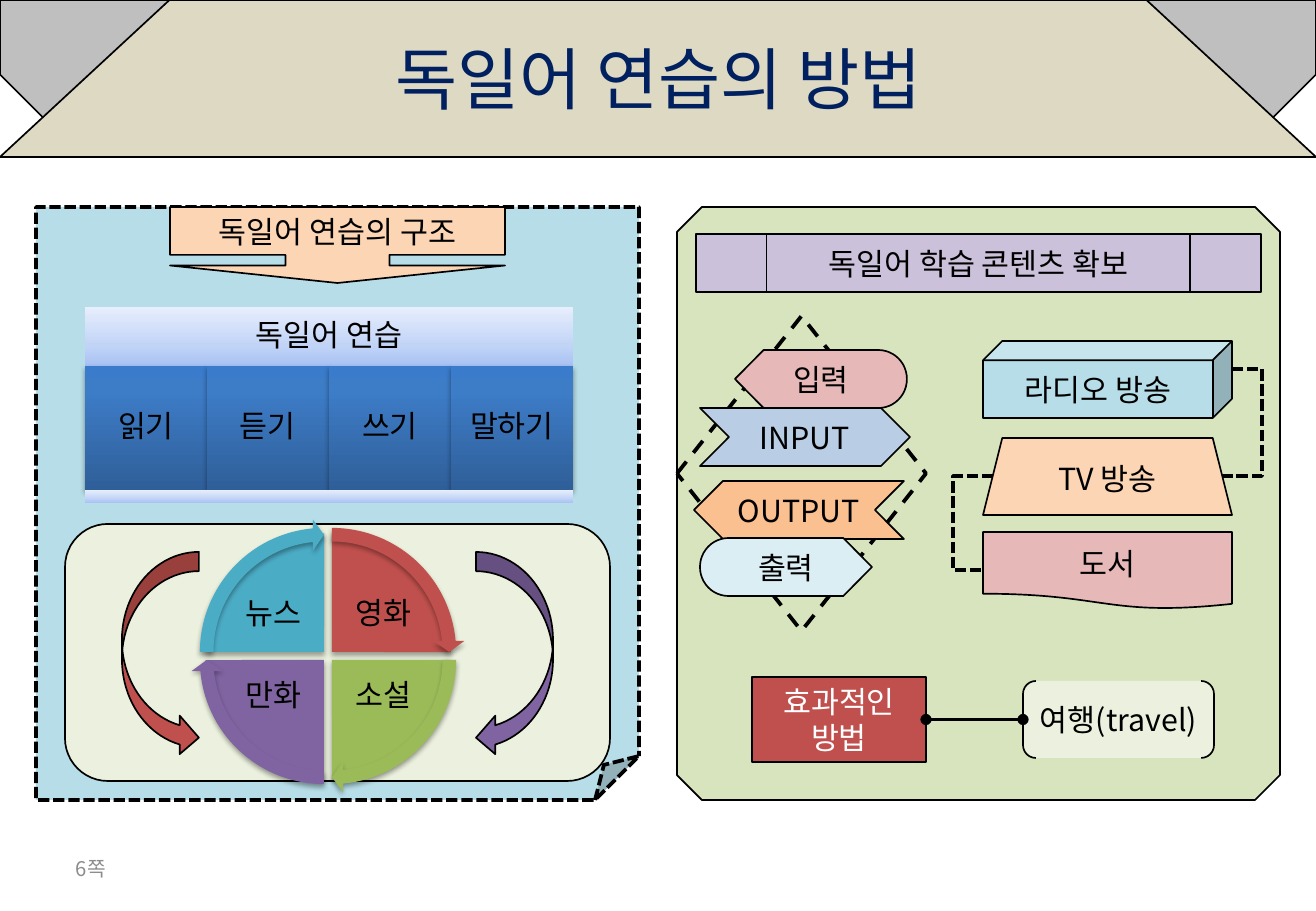
from copy import deepcopy

from lxml import etree
from pptx import Presentation
from pptx import util as u
from pptx.dml.color import RGBColor
from pptx.enum import dml, shapes, text
from pptx.oxml.ns import qn

PX = 914400 / 121.5
FONT = "Noto Sans CJK KR"
KIND = shapes.MSO_SHAPE
COLOURS = {
    "black": "000000", "white": "FFFFFF", "navy": "002060", "grey": "8C8C8C",
    "silver": "BFBFBF", "sand": "DDD9C3", "sky": "B7DEE8", "cream": "EBF1DE",
    "peach": "FCD5B5", "sage": "D7E4BD", "lilac": "CCC1DA", "pink": "E6B9B8",
    "periwinkle": "B9CDE5", "apricot": "FAC090", "ice": "DBEEF4", "red": "C0504D",
    "green": "9BBB59", "purple": "8064A2", "teal": "4BACC6",
    "pale 1": "A8C2F4", "pale 2": "C2D4F6", "pale 3": "E7EEFD",
    "blue 1": "2F5F99", "blue 2": "3D7CC7", "blue 3": "3A7CCB",
}
PALE = [(0, "pale 1"), (0.35, "pale 2"), (1, "pale 3")]
BLUE = [(0, "blue 1"), (0.8, "blue 2"), (1, "blue 3")]
THIN = {"width": 1}
DASHED = {"width": 2.25, "dash": dml.MSO_LINE.SQUARE_DOT}
WIDE_DASH = {"width": 2.25, "dash": dml.MSO_LINE.DASH}

# Content: kind, (left, top, width, height), fill, words, options
HEADER = [
    (KIND.SNIP_2_SAME_RECTANGLE, (0, 0, 1316, 149), "silver", "",
     {"flip": "V", "adjust": [0.5, 0]}),
    (KIND.TRAPEZOID, (0, 0, 1316, 157), "sand", "", {"adjust": [1.08]}),
    (None, (66, 2, 1185, 152), None, "독일어 연습의 방법", {"size": 40, "colour": "navy"}),
    (None, (64, 844, 307, 49), None, "6쪽",
     {"size": 12, "colour": "grey", "align": text.PP_ALIGN.LEFT}),
]
LEFT_PANEL = [
    (KIND.FOLDED_CORNER, (36, 207, 603, 593), "sky", "", {"adjust": [0.074], "line": DASHED}),
    (KIND.ROUNDED_RECTANGLE, (65, 524, 545, 257), "cream", "", {}),
    (KIND.DOWN_ARROW_CALLOUT, (170, 207, 335, 76), "peach", "독일어 연습의 구조",
     {"adjust": [1.368, 2.917, 0.23, 0.63]}),
    (KIND.CURVED_DOWN_ARROW, (412, 616, 205, 77), "purple", "", {"turn": 90}),
    (KIND.CURVED_UP_ARROW, (58, 616, 205, 77), "red", "", {"turn": 270, "flip": "HV"}),
]
SKILLS_TITLE = "독일어 연습"
SKILLS = ["읽기", "듣기", "쓰기", "말하기"]
# Clockwise from the upper right: label, colour, side across, side down
CYCLE = [("영화", "red", 1, -1), ("소설", "green", 1, 1),
         ("만화", "purple", -1, 1), ("뉴스", "teal", -1, -1)]
RIGHT_PANEL = [
    (KIND.OCTAGON, (677, 207, 603, 593), "sage", "", {"adjust": [0.042]}),
    (KIND.FLOWCHART_PREDEFINED_PROCESS, (696, 234, 565, 58), "lilac",
     "독일어 학습 콘텐츠 확보", {}),
    (KIND.CUBE, (983, 341, 249, 77), "sky", "라디오 방송", {}),
    (KIND.TRAPEZOID, (983, 438, 249, 77), "peach", "TV 방송", {}),
    (KIND.FLOWCHART_DOCUMENT, (983, 532, 249, 77), "pink", "도서", {"flip": "H"}),
    (KIND.FLOWCHART_DECISION, (677, 316, 249, 315), None, "", {"line": WIDE_DASH}),
    (KIND.CHEVRON, (700, 408, 210, 58), "periwinkle", "INPUT", {}),
    (KIND.CHEVRON, (694, 481, 210, 58), "apricot", "OUTPUT", {"flip": "H"}),
    (KIND.FLOWCHART_DISPLAY, (735, 350, 172, 58), "pink", "입력", {}),
    (KIND.FLOWCHART_DISPLAY, (700, 538, 172, 58), "ice", "출력", {"flip": "H"}),
]
METHOD = (KIND.RECTANGLE, (752, 677, 174, 85), "red", "효과적인\n방법", {"colour": "white"})
TRAVEL = (KIND.DOUBLE_BRACKET, (1023, 681, 191, 77), "cream", "여행(travel)", {})
# Begin x, begin y, end x, end y, bend position
BENT_LINES = [(993, 476, 983, 570, 4), (1232, 369, 1222, 476, -3)]


def px(*lengths):
    return [u.Emu(round(length * PX)) for length in lengths]


def rgb(name):
    return RGBColor.from_string(COLOURS[name])


def apply(target, values):
    for name, value in values.items():
        setattr(target, name, value)


def set_line(line, width, dash=None):
    line.color.rgb = rgb("black")
    apply(line, {"width": u.Pt(width), "dash_style": dash})


def set_guides(shape, names, values):
    guides = shape._element.spPr.find(".//" + qn("a:avLst"))
    del guides[:]
    for name, value in zip(names, values):
        etree.SubElement(guides, qn("a:gd"), name=name, fmla=f"val {round(value * 100000)}")


def set_gradient(shape, stops):
    shape.fill.gradient()
    shape.fill.gradient_angle = 90
    stop_list = shape._element.spPr.find(".//" + qn("a:gsLst"))
    stop_list.insert(1, deepcopy(stop_list[0]))
    for stop, (position, colour) in zip(shape.fill.gradient_stops, stops):
        stop.position = position
        stop.color.rgb = rgb(colour)


def add_shadow(shape):
    effects = shape._element.spPr.find(qn("a:effectLst"))
    shadow = etree.SubElement(effects, qn("a:outerShdw"), blurRad=str(u.Pt(3.1)),
                              dist=str(u.Pt(1.8)), dir="5400000", rotWithShape="0")
    colour = etree.SubElement(shadow, qn("a:srgbClr"), val=COLOURS["black"])
    etree.SubElement(colour, qn("a:alpha"), val="35000")


def write(shape, words, size, colour, align, spacing, inset):
    frame = shape.text_frame
    apply(frame, {"word_wrap": True, "vertical_anchor": text.MSO_ANCHOR.MIDDLE})
    if inset is not None:
        margin = px(inset)[0]
        apply(frame, {"margin_" + side: margin for side in ("left", "top", "right", "bottom")})
    for number, line in enumerate(words.split("\n")):
        paragraph = frame.add_paragraph() if number else frame.paragraphs[0]
        apply(paragraph, {"alignment": align, "line_spacing": spacing})
        run = paragraph.add_run()
        run.text = line
        apply(run.font, {"name": FONT, "size": u.Pt(size)})
        run.font.color.rgb = rgb(colour)
        etree.SubElement(run._r.get_or_add_rPr(), qn("a:ea"), typeface=FONT)


def draw(slide, kind, box, fill, words="", options=None):
    style = {"size": 18, "colour": "black", "align": text.PP_ALIGN.CENTER, "spacing": None,
             "inset": None, "line": THIN, "adjust": [], "flip": "", "turn": 0,
             "shadow": False, **(options or {})}
    if kind is None:
        shape = slide.shapes.add_textbox(*px(*box))
    else:
        shape = slide.shapes.add_shape(kind, *px(*box))
        shape.shadow.inherit = False
        shape.rotation = style["turn"]
        adjust = style["adjust"]
        if adjust:
            many = [f"adj{number}" for number in range(1, len(adjust) + 1)]
            set_guides(shape, many if len(adjust) > 1 else ["adj"], adjust)
        for axis in style["flip"]:
            shape._element.spPr.find(qn("a:xfrm")).set("flip" + axis, "1")
        if isinstance(fill, list):
            set_gradient(shape, fill)
        elif fill:
            shape.fill.solid()
            shape.fill.fore_color.rgb = rgb(fill)
        else:
            shape.fill.background()
        if style["line"]:
            set_line(shape.line, **style["line"])
        else:
            shape.line.fill.background()
        if style["shadow"]:
            add_shadow(shape)
    if words:
        write(shape, words, *[style[key] for key in
                              ("size", "colour", "align", "spacing", "inset")])
    return shape


def connect(slide, kind, ends, line):
    connector = slide.shapes.add_connector(kind, *px(*ends))
    set_line(connector.line, **line)
    etree.SubElement(connector._element.spPr, qn("a:effectLst"))
    return connector


def draw_skills(slide, left=85, top=307, column=122):
    plain = {"line": None, "spacing": 0.9, "inset": 8}
    width = column * len(SKILLS)
    draw(slide, KIND.RECTANGLE, (left, top, width, 59), PALE, SKILLS_TITLE, plain)
    for number, skill in enumerate(SKILLS):
        draw(slide, KIND.RECTANGLE, (left + number * column, top + 59, column, 124),
             BLUE, skill, {**plain, "shadow": True})
    draw(slide, KIND.RECTANGLE, (left, top + 183, width, 13), PALE, "", plain)


def draw_cycle(slide, centre_x=328, centre_y=656, gap=4, pie=237, ring=266):
    def centred(x, y, width, height):
        return x - width / 2, y - height / 2, width, height

    plain = {"line": None, "shadow": True}
    starts = [162, 0, 54, 108]
    for (label, colour, across, down), start in zip(CYCLE, starts):
        middle = centre_x + across * gap, centre_y + down * gap
        draw(slide, KIND.PIE, centred(*middle, pie, pie), colour, "",
             {**plain, "adjust": [start, (start + 54) % 216]})
        draw(slide, None, centred(centre_x + across * 55, centre_y + down * 41, 87, 64),
             None, label, {"spacing": 0.9, "inset": 4})
    for (label, colour, across, down), start in zip(CYCLE, starts):
        middle = centre_x + across * gap, centre_y + down * gap
        draw(slide, KIND.CIRCULAR_ARROW, centred(*middle, ring, ring), colour, "",
             {**plain, "adjust": [0.051, 3.275, start + 54 - 3.275, start, 0.059]})


def draw_connectors(slide, method, travel):
    for *ends, bend in BENT_LINES:
        connector = connect(slide, shapes.MSO_CONNECTOR.ELBOW, ends, DASHED)
        set_guides(connector, ["adj1"], [bend])
    link = connect(slide, shapes.MSO_CONNECTOR.STRAIGHT, (926, 719, 1023, 719), {"width": 2.25})
    link.begin_connect(method, 3)
    link.end_connect(travel, 1)
    for end in ("a:headEnd", "a:tailEnd"):
        etree.SubElement(link.line._get_or_add_ln(), qn(end), type="oval")


def main():
    presentation = Presentation()
    presentation.slide_width, presentation.slide_height = px(1316, 911)
    slide = presentation.slides.add_slide(presentation.slide_layouts[6])
    for item in HEADER + LEFT_PANEL:
        draw(slide, *item)
    draw_skills(slide)
    draw_cycle(slide)
    for item in RIGHT_PANEL:
        draw(slide, *item)
    draw_connectors(slide, draw(slide, *METHOD), draw(slide, *TRAVEL))
    presentation.save("out.pptx")


if __name__ == "__main__":
    main()
